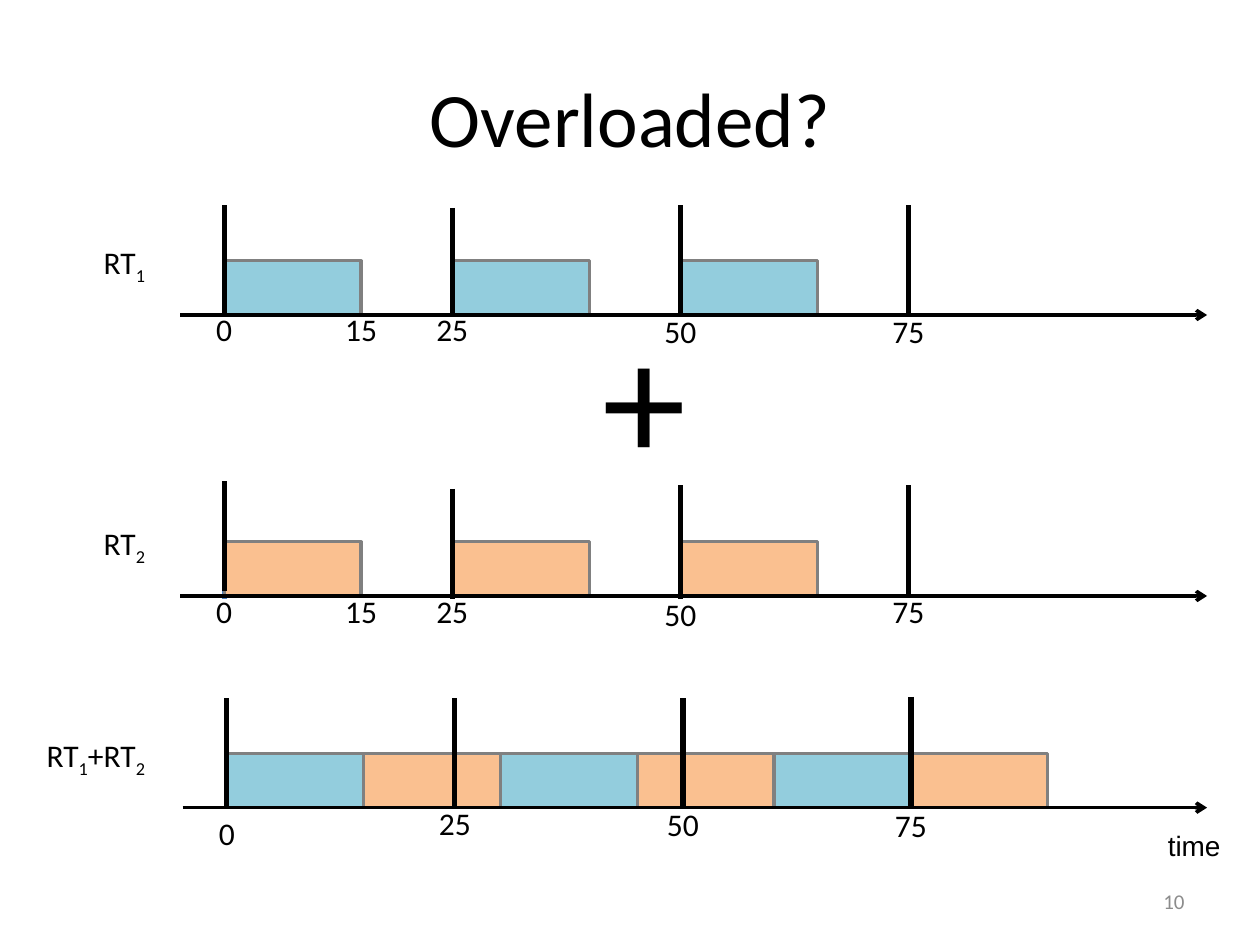
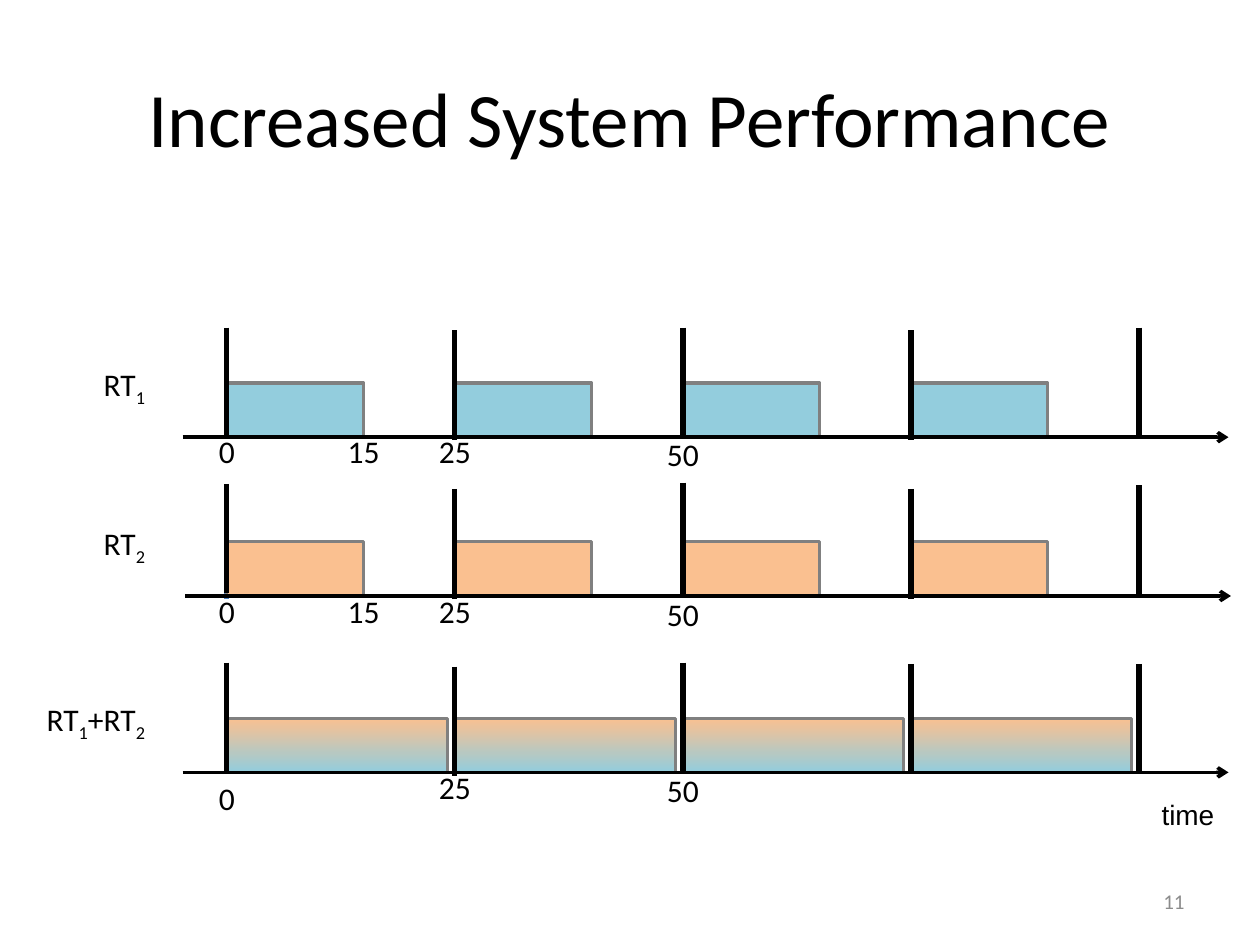
from dataclasses import dataclass

import lxml.etree
import pptx
import pptx.dml.color
import pptx.enum.shapes
import pptx.enum.text
import pptx.oxml.ns
import pptx.util

Inches, Pt = pptx.util.Inches, pptx.util.Pt
RGBColor = pptx.dml.color.RGBColor
ALIGN = pptx.enum.text.PP_ALIGN
ANCHOR = pptx.enum.text.MSO_ANCHOR
qn = pptx.oxml.ns.qn

BLACK = RGBColor(0x00, 0x00, 0x00)
PAGE_GREY = RGBColor(0x8C, 0x8C, 0x8C)
BAR_EDGE = RGBColor(0x80, 0x80, 0x80)
START_BLUE = RGBColor(0x4B, 0x7E, 0xBC)
RT1_BLUE = RGBColor(0x93, 0xCD, 0xDD)
RT2_ORANGE = RGBColor(0xFA, 0xC0, 0x90)
SHARED = (RT2_ORANGE, RT1_BLUE)  # gradient, top to bottom

PERIOD = 25
RUN = 15
SHARED_RUN = 24.2
UNIT = 1.81 / PERIOD  # inches for one unit of time
BAR_H, TICK_H = 0.43, 0.87
TEXT_H = 0.4


@dataclass
class Timeline:
    """One axis; ticks are (time, drop) and labels {time: drop}, with drops in inches below the axis."""
    name: tuple
    origin: float
    y: float
    axis: tuple
    bars: list
    ticks: list
    labels: dict
    start_mark: bool = False


def periodic(fill, count, length=RUN):
    return [(i * PERIOD, length, fill) for i in range(count)]


RT1, RT2, BOTH = ("RT", "1"), ("RT", "2"), ("RT", "1", "+RT", "2")

SLIDES = [
    dict(
        title="Overloaded?", page="10", time_at=(9.17, 6.53), plus_at=(4.68, 2.28),
        timelines=[
            Timeline(RT1, 1.78, 2.5, (1.43, 9.58), periodic(RT1_BLUE, 3),
                     [(0, 0), (25, 0.02), (50, 0), (75, 0)],
                     {0: -0.09, 15: -0.09, 25: -0.09, 50: -0.07, 75: -0.07}),
            Timeline(RT2, 1.78, 4.73, (1.43, 9.58), periodic(RT2_ORANGE, 3),
                     [(0, -0.04), (25, 0.02), (50, -0.01), (50, 0.02), (75, -0.01)],
                     {0: -0.08, 15: -0.08, 25: -0.08, 50: -0.06, 75: -0.08}, True),
            Timeline(BOTH, 1.8, 6.41, (1.45, 9.58),
                     [(i * RUN, RUN, (RT1_BLUE, RT2_ORANGE)[i % 2]) for i in range(6)],
                     [(0, 0), (25, 0), (50, 0), (75, -0.01)],
                     {0: 0, 25: -0.08, 50: -0.07, 75: -0.06}),
        ]),
    dict(
        title="Increased System Performance", page="11", time_at=(9.12, 6.28), plus_at=None,
        timelines=[
            Timeline(RT1, 1.8, 3.47, (1.45, 9.75), periodic(RT1_BLUE, 4),
                     [(0, 0), (25, 0.02), (50, 0), (75, 0.02), (100, 0)],
                     {0: -0.09, 15: -0.09, 25: -0.09, 50: -0.07}),
            Timeline(RT2, 1.8, 4.73, (1.47, 9.77), periodic(RT2_ORANGE, 4),
                     [(0, -0.02), (25, 0.02), (50, -0.03), (50, -0.01), (75, 0.02), (100, -0.01)],
                     {0: -0.08, 15: -0.08, 25: -0.08, 50: -0.06}, True),
            Timeline(BOTH, 1.8, 6.13, (1.45, 9.75), periodic(SHARED, 4, SHARED_RUN),
                     [(0, 0), (25, 0.03), (50, 0), (75, 0.01), (100, 0.01)],
                     {0: 0, 25: -0.08, 50: -0.06}),
        ]),
]


def add_text(slide, parts, left, top, width, height=TEXT_H, size=18, font="Calibri",
             color=BLACK, align=ALIGN.LEFT, anchor=ANCHOR.TOP):
    """Add a one-line text box; parts after the first that are digits become subscripts."""
    sp = slide.shapes.add_textbox(Inches(left), Inches(top), Inches(width), Inches(height))
    tf = sp.text_frame
    tf.word_wrap = False
    tf.vertical_anchor = anchor
    p = tf.paragraphs[0]
    p.alignment = align
    p.font.size, p.font.name, p.font.color.rgb = Pt(size), font, color
    for i, part in enumerate(parts):
        r = p.add_run()
        r.text = part
        if i and part.isdigit():
            r._r.get_or_add_rPr().set("baseline", "-25000")


def add_line(slide, x1, y1, x2, y2, width, color=BLACK, arrow=False):
    cxn = slide.shapes.add_connector(pptx.enum.shapes.MSO_CONNECTOR.STRAIGHT,
                                     Inches(x1), Inches(y1), Inches(x2), Inches(y2))
    cxn.line.color.rgb = color
    cxn.line.width = Pt(width)
    if arrow:
        lxml.etree.SubElement(cxn.line._get_or_add_ln(), qn("a:tailEnd")).set("type", "arrow")
    lxml.etree.SubElement(cxn._element.spPr, qn("a:effectLst"))


def add_bar(slide, left, top, width, fill):
    sp = slide.shapes.add_shape(pptx.enum.shapes.MSO_SHAPE.RECTANGLE,
                                Inches(left), Inches(top), Inches(width), Inches(BAR_H))
    sp.shadow.inherit = False
    sp.line.color.rgb = BAR_EDGE
    sp.line.width = Pt(1.75)
    if fill == SHARED:
        sp.fill.gradient()
        sp.fill.gradient_angle = 270
        for stop, color, position in zip(sp.fill.gradient_stops, fill, (0, 1)):
            stop.color.rgb = color
            stop.position = position
    else:
        sp.fill.solid()
        sp.fill.fore_color.rgb = fill


def add_timeline(slide, t):
    def x_at(time):
        return t.origin + time * UNIT

    def add_tick(time, drop, color=BLACK):
        bottom = t.y + drop
        add_line(slide, x_at(time), bottom - TICK_H, x_at(time), bottom, 3, color)

    if t.start_mark:
        add_tick(0, 0.02, START_BLUE)
    for start, length, fill in t.bars:
        add_bar(slide, x_at(start), t.y - BAR_H, length * UNIT, fill)
    for time, drop in t.ticks:
        add_tick(time, drop)
    add_line(slide, t.axis[0], t.y, t.axis[1], t.y, 2, arrow=True)
    for time, drop in t.labels.items():
        add_text(slide, [str(time)], x_at(time) - 0.23, t.y + drop, 0.46, align=ALIGN.CENTER)
    add_text(slide, t.name, 0.25, t.y - 0.62, 1.0, align=ALIGN.RIGHT)


def add_slide(prs, title, page, time_at, plus_at, timelines):
    slide = prs.slides.add_slide(prs.slide_layouts[5])
    sp = slide.shapes.title
    sp.left, sp.top, sp.width, sp.height = Inches(0.5), Inches(0.3), Inches(9), Inches(1.25)
    sp.text_frame.text = title
    sp.text_frame.vertical_anchor = ANCHOR.MIDDLE
    p = sp.text_frame.paragraphs[0]
    p.alignment = ALIGN.CENTER
    p.font.size, p.font.name, p.font.color.rgb = Pt(44), "Calibri", BLACK

    for timeline in timelines:
        add_timeline(slide, timeline)
    if plus_at:
        add_text(slide, ["+"], *plus_at, 0.87, 1.72, size=96)
    add_text(slide, ["time"], *time_at, 0.62, 0.37, size=16, font="Arial")
    add_text(slide, [page], 7.17, 6.95, 2.33, size=12, color=PAGE_GREY,
             align=ALIGN.RIGHT, anchor=ANCHOR.MIDDLE)


def main():
    prs = pptx.Presentation()
    prs.slide_width, prs.slide_height = Inches(10), Inches(7.5)
    for content in SLIDES:
        add_slide(prs, **content)
    prs.save("out.pptx")


if __name__ == "__main__":
    main()
